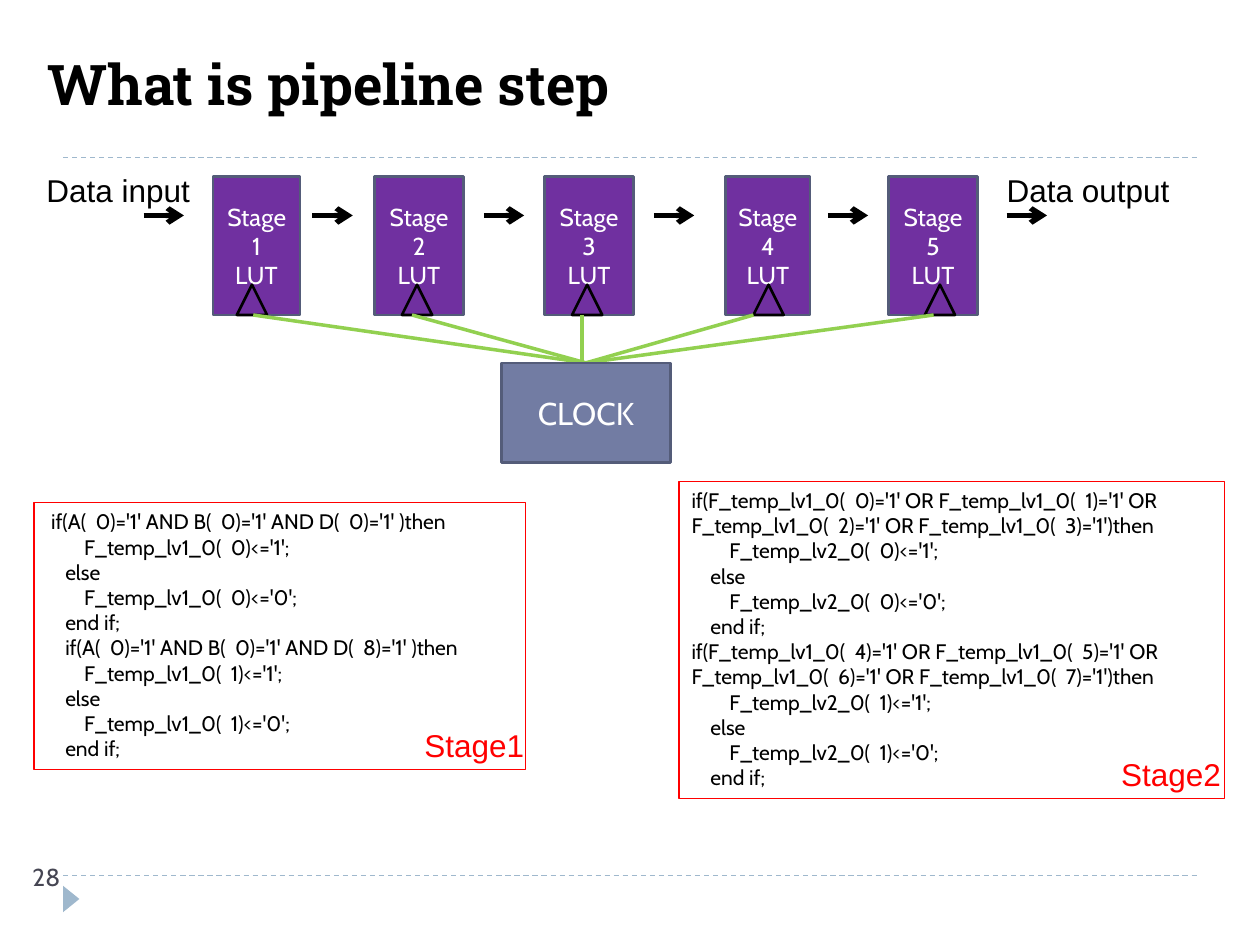
"""Build a slide that explains the steps of a clocked pipeline."""
from lxml import etree
from pptx import Presentation
from pptx import util as u
from pptx.dml.color import RGBColor
from pptx.enum import dml, shapes, text
from pptx.oxml.ns import qn

COLORS = {
    "black": "000000", "white": "FFFFFF", "red": "FF0000", "rule": "9FB8CD",
    "stage": "7030A0", "clock": "727CA3", "edge": "545C79", "wire": "92D050",
    "number": "464653",
}
FORMATS = {
    "title": {"size": u.Pt(32), "name": "Roboto Slab", "bold": True},
    "label": {"size": u.Pt(18), "name": "Arial"},
    "stage": {"size": u.Pt(14), "name": "Cabin"},
    "clock": {"size": u.Pt(18), "name": "Cabin"},
    "code": {"size": u.Pt(12), "name": "Cabin"},
}
SPACE_WIDTH = 0.0375
STAGE_TOP, STAGE_HEIGHT = 1.4, 1.1
STAGE_BOTTOM = STAGE_TOP + STAGE_HEIGHT
MARK_SIZE = 0.24
CLOCK_INPUT = (4.65, 2.88)
ARROW_Y, ARROW_LENGTH = 1.71, 0.32
ARROW_STARTS = (1.14, 2.48, 3.84, 5.19, 6.57, 7.99)
# Each stage: left, width, left of its clock mark, both ends of its wire.
STAGES = (
    (1.69, 0.69, 1.88, 2.01, 4.65),
    (2.97, 0.71, 3.19, 3.27, 4.65),
    (4.32, 0.71, 4.54, 4.62, 4.62),
    (5.76, 0.67, 5.98, 5.98, 4.65),
    (7.05, 0.71, 7.34, 7.41, 4.65),
)
STAGE1_TESTS = (
    (1, "if(A(  0)='1' AND B(  0)='1' AND D(  0)='1' )then"),
    (4, "if(A(  0)='1' AND B(  0)='1' AND D(  8)='1' )then"),
)
STAGE2_TESTS = tuple(
    (0, "if(" + " OR ".join(f"F_temp_lv1_0(  {bit})='1'" for bit in range(first, first + 4)) + ")then")
    for first in (0, 4)
)


def rgb(color):
    """Return the named colour."""
    return RGBColor.from_string(COLORS[color])


def write(frame, lines, style, color, align=text.PP_ALIGN.LEFT, **layout):
    """Write one paragraph per line in the given style."""
    for key, value in layout.items():
        setattr(frame, key, value)
    for index, line in enumerate(lines):
        paragraph = frame.paragraphs[0] if index == 0 else frame.add_paragraph()
        paragraph.alignment = align
        run = paragraph.add_run()
        run.text = line
        for key, value in FORMATS[style].items():
            setattr(run.font, key, value)
        run.font.color.rgb = rgb(color)


def add_label(slide, box, words, color="black", style="label", wrap=False):
    """Add a free-standing line of text."""
    label = slide.shapes.add_textbox(*map(u.Inches, box))
    write(label.text_frame, [words], style, color, word_wrap=wrap)


def add_block(slide, box, fill=None, edge=None, weight=1.5, kind="RECTANGLE"):
    """Add a flat preset shape and return it."""
    block = slide.shapes.add_shape(shapes.MSO_SHAPE[kind], *map(u.Inches, box))
    block.shadow.inherit = False
    for part, color in ((block.fill, fill), (block.line.fill, edge)):
        if color:
            part.solid()
            part.fore_color.rgb = rgb(color)
        else:
            part.background()
    if edge:
        block.line.width = u.Pt(weight)
    return block


def add_line(slide, start, end, color, weight, dash=None, arrow=False):
    """Add a straight line, dashed or with an arrowhead on request."""
    line = slide.shapes.add_connector(
        shapes.MSO_CONNECTOR.STRAIGHT, *map(u.Inches, (*start, *end)))
    line.line.color.rgb = rgb(color)
    line.line.width = u.Pt(weight)
    if dash:
        line.line.dash_style = dash
    properties = line.element.spPr
    if arrow:
        etree.SubElement(properties.find(qn("a:ln")), qn("a:tailEnd"), type="arrow")
    etree.SubElement(properties, qn("a:effectLst"))


def add_node(slide, box, lines, style):
    """Add a filled block with centred words."""
    node = add_block(slide, box, style, "edge")
    write(node.text_frame, lines, style, "white", text.PP_ALIGN.CENTER,
          vertical_anchor=text.MSO_ANCHOR.MIDDLE, word_wrap=True)


def add_code(slide, box, tests, output):
    """Add a framed listing with one if-else per test."""
    rows = []
    for bit, (depth, test) in enumerate(tests):
        rows += [(depth, test), (8, f"{output}(  {bit})<='1';"), (4, "else"),
                 (8, f"{output}(  {bit})<='0';"), (4, "end if;")]
    frame = add_block(slide, box, edge="red", weight=0.75).text_frame
    write(frame, [line for _, line in rows], "code", "black",
          vertical_anchor=text.MSO_ANCHOR.TOP, word_wrap=True)
    for paragraph, (depth, _) in zip(frame.paragraphs, rows):
        indent = u.Inches(depth * SPACE_WIDTH)
        paragraph.alignment = text.PP_ALIGN.LEFT
        paragraph.runs[0].font.bold = False
        paragraph.line_spacing = 1.0
        properties = paragraph._p.get_or_add_pPr()
        properties.set("marL", str(int(indent)))
        properties.set("indent", "0")


def add_title(slide, words):
    """Place and format the title."""
    title = slide.shapes.title
    for key, value in zip(("left", "top", "width", "height"), (0.28, -0.27, 8.5, 1.25)):
        setattr(title, key, u.Inches(value))
    write(title.text_frame, [words], "title", "black", word_wrap=True,
          auto_size=text.MSO_AUTO_SIZE.NONE, vertical_anchor=text.MSO_ANCHOR.BOTTOM)


def add_frame(slide):
    """Add the dashed rules, corner marker and page number."""
    for y in (6.95, 1.25):
        add_line(slide, (0.5, y), (9.5, y), "rule", 0.75, dml.MSO_LINE.DASH)
    marker = add_block(slide, (0.46, 7.07, 0.21, 0.13), "rule", kind="ISOSCELES_TRIANGLE")
    marker.rotation = 90
    add_label(slide, (0.16, 6.79, 0.5, 0.5), "28", "number", "stage", True)


def add_pipeline(slide):
    """Add the stages, their clock wiring and the data arrows."""
    for number, (left, width, mark, wire, target) in enumerate(STAGES, 1):
        add_node(slide, (left, STAGE_TOP, width, STAGE_HEIGHT), [f"Stage{number}", "LUT"], "stage")
        add_block(slide, (mark, STAGE_BOTTOM - MARK_SIZE, MARK_SIZE, MARK_SIZE),
                  edge="black", kind="ISOSCELES_TRIANGLE")
        add_line(slide, (wire, STAGE_BOTTOM), (target, CLOCK_INPUT[1]), "wire", 2)
    for start in ARROW_STARTS:
        add_line(slide, (start, ARROW_Y), (start + ARROW_LENGTH, ARROW_Y), "black", 3, arrow=True)
    add_node(slide, (3.98, CLOCK_INPUT[1], 1.34, 0.79), ["CLOCK"], "clock")
    add_label(slide, (0.27, 1.31, 1.35, 0.4), "Data input")
    add_label(slide, (7.89, 1.31, 1.51, 0.4), "Data output")


def main():
    """Build and save the slide."""
    deck = Presentation()
    deck.slide_width, deck.slide_height = u.Inches(10), u.Inches(7.5)
    slide = deck.slides.add_slide(deck.slide_layouts[5])
    add_frame(slide)
    add_title(slide, "What is pipeline step")
    add_pipeline(slide)
    add_code(slide, (0.27, 3.99, 3.9, 2.12), STAGE1_TESTS, "F_temp_lv1_0")
    add_code(slide, (5.39, 3.82, 4.33, 2.52), STAGE2_TESTS, "F_temp_lv2_0")
    add_label(slide, (3.27, 5.71, 1, 0.4), "Stage1", "red")
    add_label(slide, (8.8, 5.94, 1, 0.4), "Stage2", "red")
    deck.save("out.pptx")


if __name__ == "__main__":
    main()
